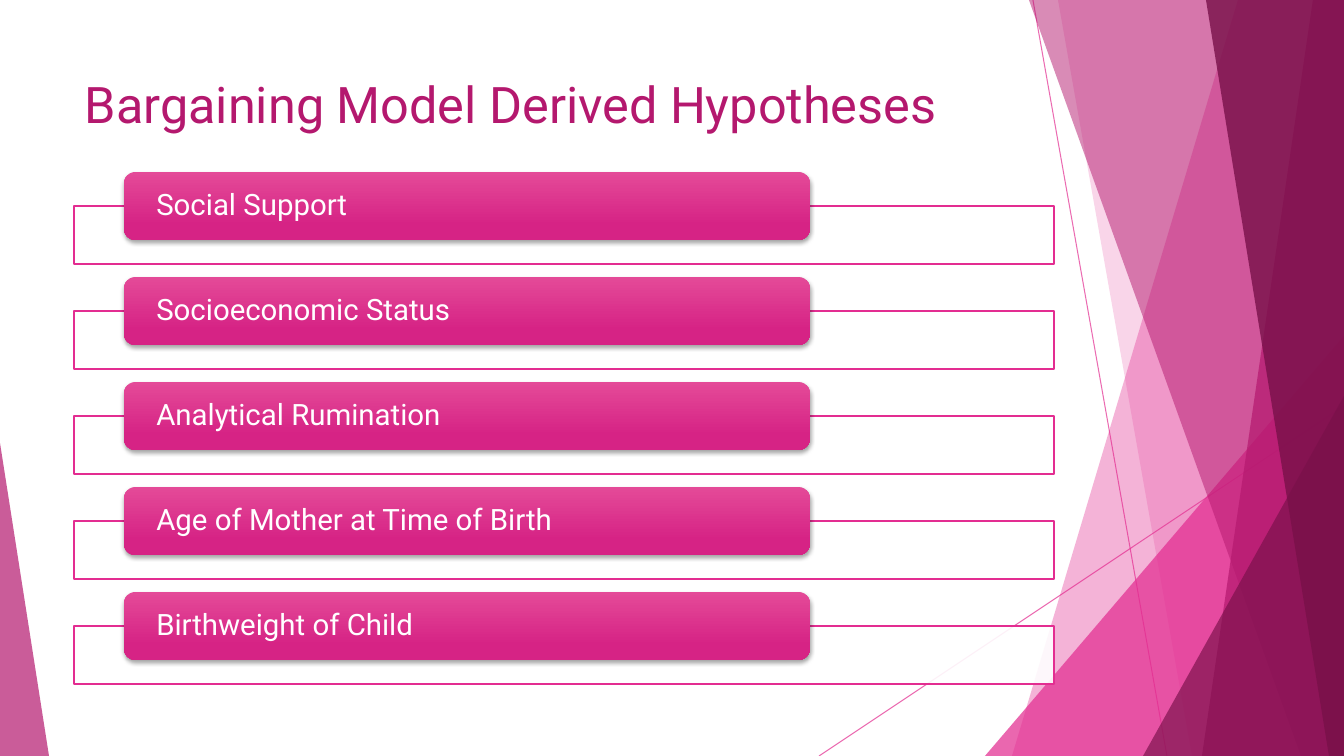
from dataclasses import dataclass

from lxml.etree import SubElement
from pptx import Presentation
from pptx.dml.color import RGBColor
from pptx.enum.shapes import MSO_CONNECTOR, MSO_SHAPE
from pptx.enum.text import MSO_ANCHOR, PP_ALIGN
from pptx.oxml.ns import qn
from pptx.util import Emu, Pt

WIDE, HIGH = 1344, 756
SCALE = 12192000 / WIDE
FONT = "Roboto"

WHITE = RGBColor(0xFF, 0xFF, 0xFF)
BLACK = RGBColor(0x00, 0x00, 0x00)
PINK = RGBColor(0xE3, 0x2D, 0x91)
BERRY = RGBColor(0xB4, 0x18, 0x6E)
PLUM = RGBColor(0x78, 0x10, 0x49)
LIGHT = RGBColor(0xE4, 0x4A, 0x98)
DEEP = RGBColor(0xD6, 0x23, 0x85)


@dataclass
class Ray:
    start: tuple[int, int]
    end: tuple[int, int]


@dataclass
class Facet:
    """A band between a slanted left edge and the right slide edge."""
    top: int
    foot: int
    color: RGBColor
    alpha: int


@dataclass
class Wedge:
    """A triangle standing on the slide's bottom edge."""
    left: int
    top: int
    width: int
    peak: float
    color: RGBColor
    alpha: int


RAYS = [Ray((1033, 0), (1167, HIGH)), Ray((WIDE, 406), (819, HIGH))]
DECOR = [
    Facet(1238, 1012, PINK, 36),
    Facet(1058, 1192, PINK, 20),
    Wedge(985, 336, 359, 1, PINK, 72),
    Facet(1029, 1301, BERRY, 50),
    Facet(1313, 1202, BERRY, 70),
    Facet(1206, 1329, PLUM, 80),
    Wedge(1143, 396, 201, 1, PLUM, 66),
    Wedge(0, 443, 49, 0, BERRY, 70),
]
TOPICS = [
    "Social Support",
    "Socioeconomic Status",
    "Analytical Rumination",
    "Age of Mother at Time of Birth",
    "Birthweight of Child",
]
FIRST, PITCH = 172, 105


def px(size: float) -> Emu:
    return Emu(round(size * SCALE))


def fade(fill, alpha: int) -> None:
    """Set the opacity, in percent, of a solid fill."""
    color = fill._xPr.find(qn("a:solidFill"))[0]
    SubElement(color, qn("a:alpha"), val=str(alpha * 1000))


def paint(shape, color: RGBColor, alpha: int) -> None:
    shape.shadow.inherit = False
    shape.fill.solid()
    shape.fill.fore_color.rgb = color
    fade(shape.fill, alpha)
    shape.line.fill.background()


def draw_ray(slide, ray: Ray) -> None:
    line = slide.shapes.add_connector(
        MSO_CONNECTOR.STRAIGHT, *map(px, ray.start + ray.end))
    line.line.color.rgb = PINK
    line.line.width = Pt(0.75)
    fade(line.line.fill, 70)
    SubElement(line._element.spPr, qn("a:effectLst"))


def draw_facet(slide, facet: Facet) -> None:
    pen = slide.shapes.build_freeform(facet.top, 0, SCALE)
    pen.add_line_segments([(WIDE, 0), (WIDE, HIGH), (facet.foot, HIGH)])
    paint(pen.convert_to_shape(), facet.color, facet.alpha)


def draw_wedge(slide, wedge: Wedge) -> None:
    shape = slide.shapes.add_shape(
        MSO_SHAPE.ISOSCELES_TRIANGLE, px(wedge.left), px(wedge.top),
        px(wedge.width), px(HIGH - wedge.top))
    shape.adjustments[0] = wedge.peak
    paint(shape, wedge.color, wedge.alpha)


def write(shape, text: str, size: int, color: RGBColor):
    frame = shape.text_frame
    frame.word_wrap = True
    frame.text = text
    para = frame.paragraphs[0]
    para.alignment = PP_ALIGN.LEFT
    para.font.name = FONT
    para.font.size = Pt(size)
    para.font.color.rgb = color
    return frame


def cast(shape) -> None:
    """Drop a soft shadow straight below the shape."""
    shape.shadow.inherit = False
    effects = shape._element.spPr.find(qn("a:effectLst"))
    drop = SubElement(
        effects, qn("a:outerShdw"), blurRad=str(Pt(3)), dist=str(Pt(2)),
        dir="5400000", algn="ctr", rotWithShape="0")
    color = SubElement(drop, qn("a:srgbClr"), val=str(BLACK))
    SubElement(color, qn("a:alpha"), val="35000")


def draw_topic(slide, text: str, top: int) -> None:
    # Outlined frame
    box = slide.shapes.add_shape(
        MSO_SHAPE.RECTANGLE, px(74), px(top + 34), px(980), px(58))
    paint(box, WHITE, 90)
    box.line.color.rgb = PINK
    box.line.width = Pt(1)

    # Gradient label
    label = slide.shapes.add_shape(
        MSO_SHAPE.ROUNDED_RECTANGLE, px(124), px(top), px(686), px(68))
    label.line.fill.background()
    label.fill.gradient()
    label.fill.gradient_angle = 270
    stops = zip(label.fill.gradient_stops, [(0, LIGHT), (0.78, DEEP)])
    for stop, (place, color) in stops:
        stop.position = place
        stop.color.rgb = color
    cast(label)
    frame = write(label, text, 21, WHITE)
    frame.vertical_anchor = MSO_ANCHOR.MIDDLE
    frame.margin_left = frame.margin_right = px(29)
    frame.margin_top = frame.margin_bottom = 0
    frame.paragraphs[0].line_spacing = 0.9


def main() -> None:
    deck = Presentation()
    deck.slide_width, deck.slide_height = px(WIDE), px(HIGH)
    slide = deck.slides.add_slide(deck.slide_layouts[6])

    # Background rays and facets
    for ray in RAYS:
        draw_ray(slide, ray)
    for part in DECOR:
        if isinstance(part, Facet):
            draw_facet(slide, part)
        else:
            draw_wedge(slide, part)

    # Title
    title = slide.shapes.add_textbox(px(75), px(68), px(948), px(145))
    write(title, "Bargaining Model Derived Hypotheses", 36, BERRY)

    # Hypotheses
    for row, text in enumerate(TOPICS):
        draw_topic(slide, text, FIRST + row * PITCH)

    deck.save("out.pptx")


if __name__ == "__main__":
    main()
